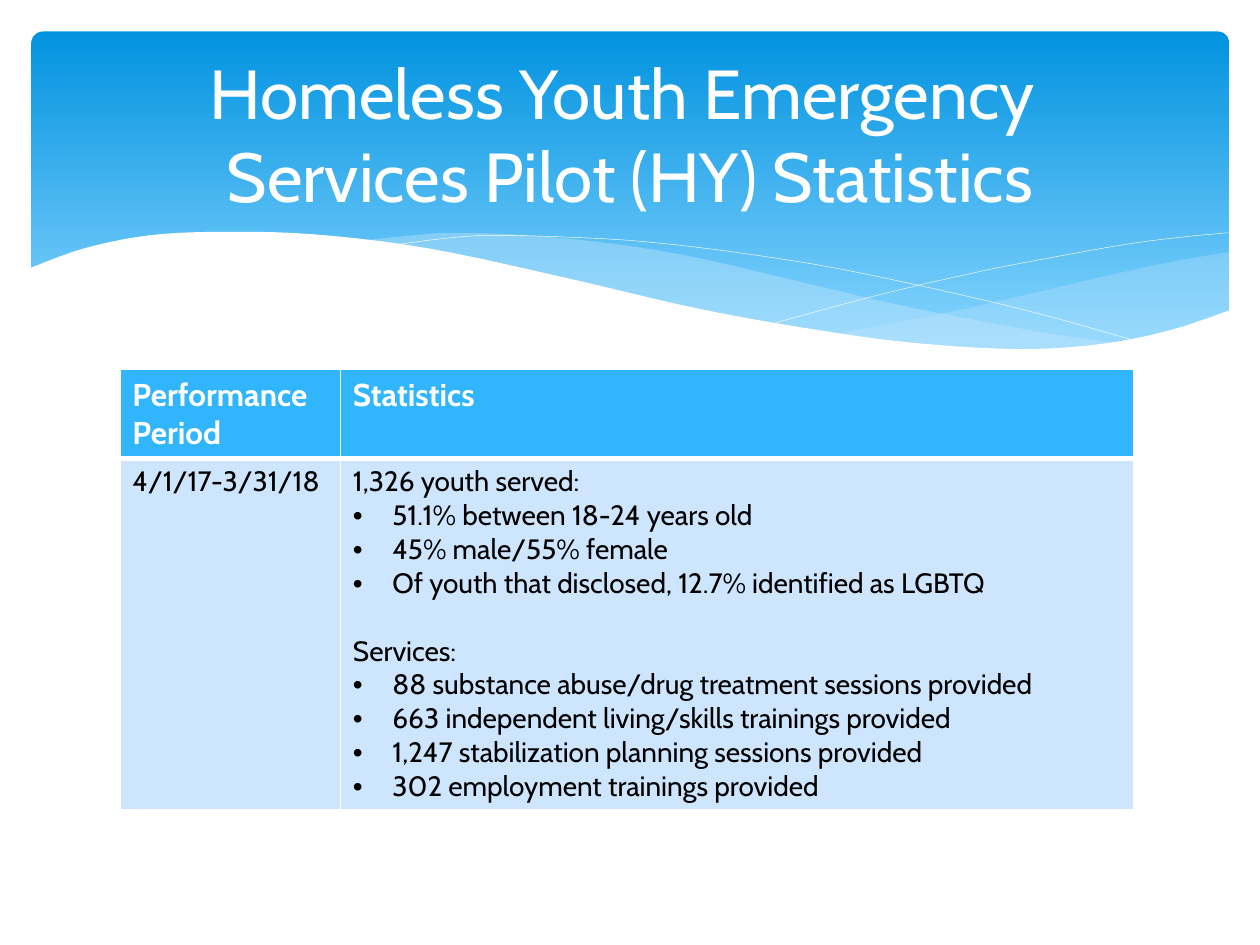
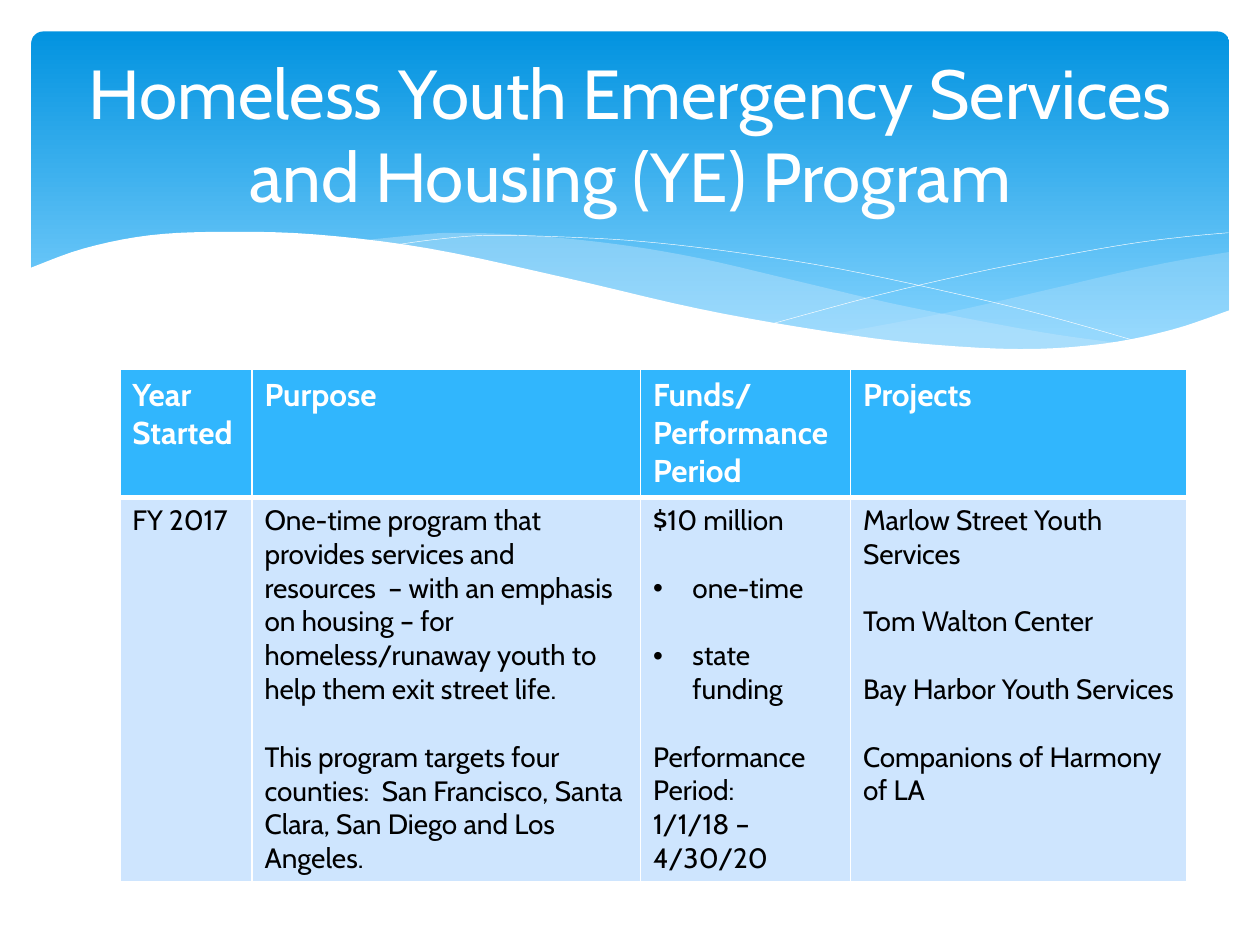
"""Build two slides on homeless youth programs, each with a wave band and a table."""
from dataclasses import dataclass

from lxml import etree
from pptx import Presentation
from pptx.dml.color import RGBColor
from pptx.enum.shapes import MSO_SHAPE
from pptx.enum.text import MSO_ANCHOR, MSO_AUTO_SIZE, PP_ALIGN
from pptx.oxml.ns import qn
from pptx.util import Pt

ROUND = MSO_SHAPE.ROUNDED_RECTANGLE
MIDDLE = MSO_ANCHOR.MIDDLE
FIXED = MSO_AUTO_SIZE.NONE
CENTER = PP_ALIGN.CENTER
TITLE_ONLY = 5
BULLET = "•"


@dataclass(frozen=True)
class Theme:
    font: str = "Cabin"
    white: str = "FFFFFF"
    ink: str = "000000"
    deep: str = "0293E0"
    sky: str = "83D3FE"
    mist: str = "C6E7FC"
    head: str = "31B6FD"
    pale: str = "CEE5FE"
    title: float = 39.6
    label: float = 18
    text: float = 16
    gap: float = 19.3
    indent: float = 22.5


RIGHT_TOP = [(702.5, 144), (673, 149), (641.5, 155.5), (599, 165.5),
             (542, 178.5), (476, 191)]
RIGHT_LOW = [(476, 191), (507.5, 195), (545, 198.5), (578, 200),
             (615, 198.5), (651.5, 193.5), (683.5, 185), (702.5, 178)]
LEFT_TOP = [(643, 196.5), (602.5, 191), (558, 183), (508, 173), (453, 160),
            (399.5, 147.5), (352, 139.5), (302.5, 134.5), (260, 133),
            (236, 134.5), (206, 137.5)]
LEFT_LOW = [(206, 137.5), (246, 143.5), (291, 152), (323, 160),
            (381.5, 173), (432.5, 183.5), (479, 191.5), (520, 197.5),
            (565, 200), (603.5, 200), (643, 196.5)]
FALL = [(222.5, 140.5), (247.5, 137), (278.5, 134.5), (324, 135.5),
        (367, 138), (419, 144), (479, 153.5), (547, 168), (598.5, 180.5),
        (653, 196)]
RISE = [(441.5, 185), (500.5, 169), (558.5, 155.5), (602, 147),
        (644.5, 139.5), (675.5, 135.5), (702, 133)]
EDGE = [(703.5, 177), (669.5, 188.5), (630, 196.5), (582.5, 199.5),
        (522.5, 196), (466.5, 188.5), (399.5, 176.5), (322, 158.5),
        (245, 142), (180, 134), (127.5, 132.5), (85.5, 134.5), (48, 142),
        (16.5, 153.5)]
BASE = [(16.5, 237), (703.5, 237)]


def smooth(knots, steps=5):
    """Return a Catmull-Rom curve through the knots."""
    ends = [knots[0], *knots, knots[-1]]
    curve = [knots[0]]
    for a, b, c, d in zip(ends, ends[1:], ends[2:], ends[3:]):
        for step in range(1, steps + 1):
            t = step / steps
            curve.append(tuple(
                (2 * q + (r - p) * t + (2 * p - 5 * q + 4 * r - s) * t ** 2
                 + (3 * q - p - 3 * r + s) * t ** 3) / 2
                for p, q, r, s in zip(a, b, c, d)))
    return curve


class Deck:
    """Hold the theme and the current slide, and draw each kind of element."""

    def __init__(self, theme):
        self.theme = theme
        self.show = Presentation()
        self.show.slide_width, self.show.slide_height = Pt(720), Pt(540)
        self.slide = None

    def start(self, title):
        """Add a slide with the shared band and its title."""
        layout = self.show.slide_layouts[TITLE_ONLY]
        self.slide = self.show.slides.add_slide(layout)
        self.band()
        self.title(title)

    def style(self, runs, size, color, bold=False):
        """Format runs in the theme font."""
        for run in runs:
            run.font.name = self.theme.font
            run.font.size = Pt(size)
            run.font.bold = bold
            run.font.color.rgb = RGBColor.from_string(color)

    def title(self, text):
        """Fill the title placeholder and bring it to the front."""
        box = self.slide.shapes.title
        box.left, box.top, box.width, box.height = Pt(36), Pt(26.5), Pt(648), Pt(99)
        frame = box.text_frame
        frame.text = text
        frame.word_wrap = True
        frame.auto_size = FIXED
        frame.vertical_anchor = MIDDLE
        para = frame.paragraphs[0]
        para.alignment = CENTER
        self.style(para.runs, self.theme.title, self.theme.white)
        self.slide.shapes._spTree.append(box._element)

    def trace(self, points, closed):
        """Draw an outline through the points."""
        spots = [(Pt(x), Pt(y)) for x, y in points]
        pen = self.slide.shapes.build_freeform(*spots[0])
        pen.add_line_segments(spots[1:], close=closed)
        shape = pen.convert_to_shape()
        shape.shadow.inherit = False
        return shape

    def wave(self, points, color, alpha=100):
        """Draw a filled wave with the given opacity in percent."""
        shape = self.trace(points, True)
        shape.fill.solid()
        shape.fill.fore_color.rgb = RGBColor.from_string(color)
        if alpha < 100:
            tint = shape._element.spPr.find(".//" + qn("a:srgbClr"))
            etree.SubElement(tint, qn("a:alpha"), val=str(alpha * 1000))
        shape.line.fill.background()

    def curve(self, knots):
        """Draw a thin white curve."""
        shape = self.trace(smooth(knots), False)
        shape.fill.background()
        shape.line.color.rgb = RGBColor.from_string(self.theme.white)
        shape.line.width = Pt(0.25)

    def band(self):
        """Draw the gradient band and its waves."""
        look = self.theme
        box = self.slide.shapes.add_shape(ROUND, Pt(18), Pt(18), Pt(684.5), Pt(194.5))
        box.shadow.inherit = False
        box.adjustments[0] = 0.034
        box.line.fill.background()
        box.fill.gradient()
        box.fill.gradient_angle = 270
        stops = zip(box.fill.gradient_stops, (look.deep, look.sky), (0, 0.9))
        for stop, color, place in stops:
            stop.color.rgb = RGBColor.from_string(color)
            stop.position = place
        self.wave(smooth(RIGHT_TOP) + smooth(RIGHT_LOW), look.mist, 29)
        self.wave(smooth(LEFT_TOP) + smooth(LEFT_LOW), look.mist, 40)
        self.curve(FALL)
        self.curve(RISE)
        self.wave(smooth(EDGE) + BASE, look.white)

    def border(self, cell, head):
        """Give a cell white borders, heavier below the header."""
        props = cell._tc.get_or_add_tcPr()
        sides = {"L": 1, "R": 1, "T": 1 if head else 3, "B": 3 if head else 1}
        for spot, (side, width) in enumerate(sides.items()):
            line = etree.Element(qn("a:ln" + side), w=str(Pt(width)))
            fill = etree.SubElement(line, qn("a:solidFill"))
            etree.SubElement(fill, qn("a:srgbClr"), val=self.theme.white)
            props.insert(spot, line)

    def cell(self, cell, blocks, head):
        """Fill a cell with blocks of lines, set apart by a gap."""
        look = self.theme
        cell.fill.solid()
        cell.fill.fore_color.rgb = RGBColor.from_string(look.head if head else look.pale)
        self.border(cell, head)
        lines = [(line, part > 0 and row == 0)
                 for part, block in enumerate(blocks)
                 for row, line in enumerate(block)]
        frame = cell.text_frame
        frame.text = "\n".join(line.removeprefix(BULLET) for line, _ in lines)
        for para, (line, gap) in zip(frame.paragraphs, lines):
            if gap:
                para.space_before = Pt(look.gap)
            if line.startswith(BULLET):
                self.bullet(para)
            size, color = (look.label, look.white) if head else (look.text, look.ink)
            self.style(para.runs, size, color, head)

    def bullet(self, para):
        """Turn a paragraph into a bullet item."""
        props = para._p.get_or_add_pPr()
        inset = Pt(self.theme.indent)
        props.set("marL", str(inset))
        props.set("indent", str(-inset))
        etree.SubElement(props, qn("a:buFont"), typeface="Arial")
        etree.SubElement(props, qn("a:buChar"), char=BULLET)

    def table(self, widths, heights, rows):
        """Add a table whose first row is the header."""
        grid = self.slide.shapes.add_table(
            len(rows), len(widths), Pt(68.5), Pt(211),
            Pt(sum(widths)), Pt(sum(heights))).table
        grid.horz_banding = False
        for column, width in zip(grid.columns, widths):
            column.width = Pt(width)
        for index, (height, row) in enumerate(zip(heights, rows)):
            grid.rows[index].height = Pt(height)
            for spot, blocks in enumerate(row):
                self.cell(grid.cell(index, spot), blocks, index == 0)


def main():
    """Build both slides and save them."""
    deck = Deck(Theme())
    deck.start("Homeless Youth Emergency \vServices Pilot (HY) Statistics")
    deck.table([126, 453.5], [51, 199], [
        [[["Performance Period"]], [["Statistics"]]],
        [[["4/1/17-3/31/18"]],
         [["1,326 youth served:",
           "•51.1% between 18-24 years old",
           "•45% male/55% female",
           "•Of youth that disclosed, 12.7% identified as LGBTQ"],
          ["Services:",
           "•88 substance abuse/drug treatment sessions provided",
           "•663 independent living/skills trainings provided",
           "•1,247 stabilization planning sessions provided",
           "•302 employment trainings provided"]]],
    ])
    deck.start("Homeless Youth Emergency Services and Housing (YE) Program")
    deck.table([75.5, 222, 120, 192], [72, 218], [
        [[["Year Started"]], [["Purpose"]],
         [["Funds/", "Performance Period"]], [["Projects"]]],
        [[["FY 2017"]],
         [["One-time program that provides services and resources  – with an "
           "emphasis on housing – for homeless/runaway youth to help them "
           "exit street life."],
          ["This program targets four counties:  San Francisco, Santa Clara, "
           "San Diego and Los Angeles."]],
         [["$10 million"], ["•one-time"], ["•state funding"],
          ["Performance Period:", "1/1/18 – 4/30/20"]],
         [["Marlow Street Youth Services"], ["Tom Walton Center"],
          ["Bay Harbor Youth Services"], ["Companions of Harmony of LA"]]],
    ])
    deck.show.save("out.pptx")


if __name__ == "__main__":
    main()
